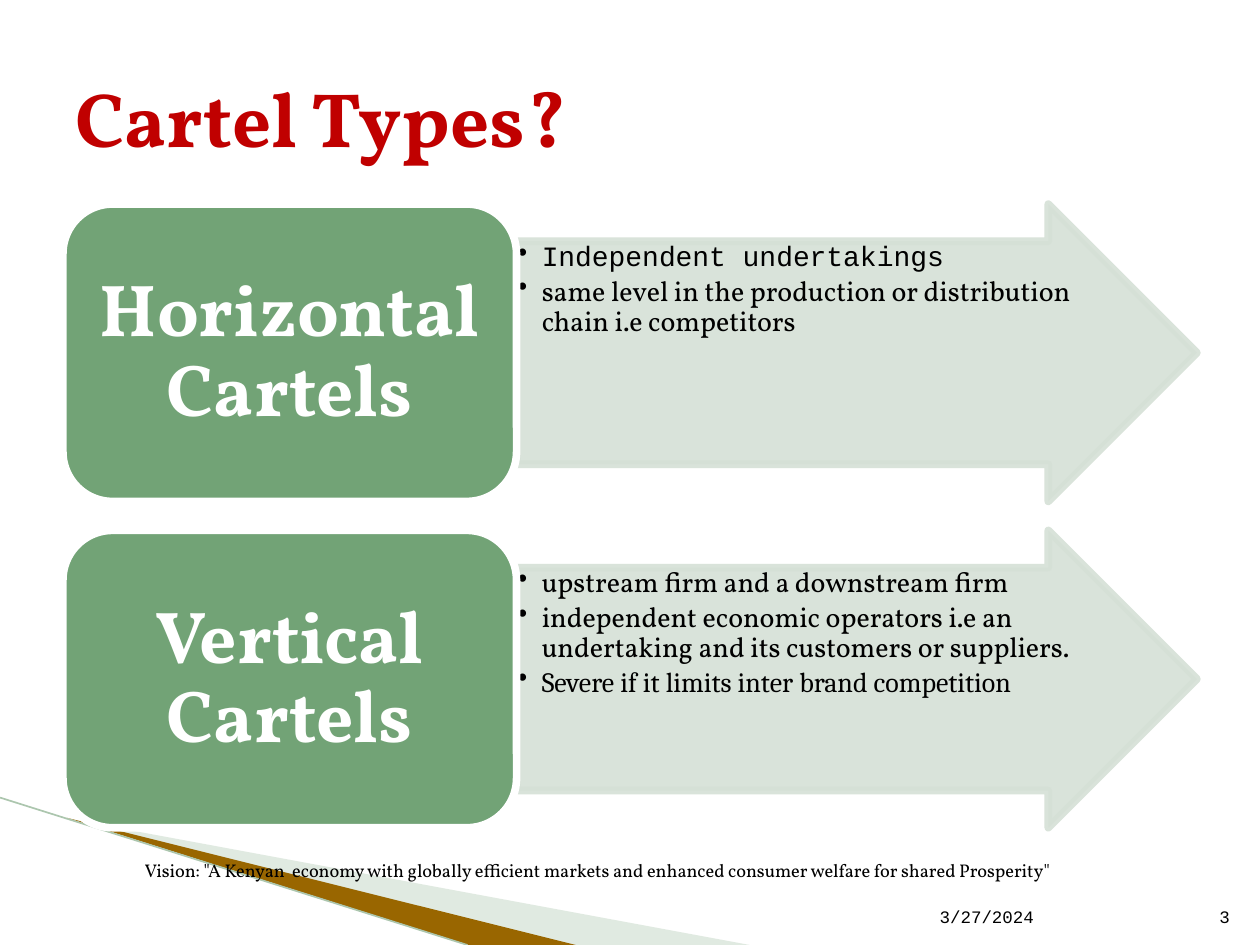
import pptx
import pptx.dml.color
import pptx.enum.shapes
import pptx.enum.text
import pptx.oxml.ns
import pptx.oxml.xmlchemy
import pptx.util
from lxml import etree

Inches = pptx.util.Inches
Pt = pptx.util.Pt
RGBColor = pptx.dml.color.RGBColor
Shape = pptx.enum.shapes.MSO_SHAPE
Align = pptx.enum.text.PP_ALIGN
Anchor = pptx.enum.text.MSO_ANCHOR
qn = pptx.oxml.ns.qn

BLACK = RGBColor(0x00, 0x00, 0x00)
WHITE = RGBColor(0xFF, 0xFF, 0xFF)
RED = RGBColor(0xC0, 0x00, 0x00)
GREEN = RGBColor(0x72, 0xA3, 0x76)
PALE_GREEN = RGBColor(0xD5, 0xE0, 0xD6)
SWOOSH_GREEN = RGBColor(0xB3, 0xCB, 0xB5)
LINE_GREEN = RGBColor(0xAC, 0xC6, 0xAE)
BROWN = RGBColor(0x99, 0x66, 0x00)

SERIF = "Vollkorn"
MONO = "Courier New"
BORDER = Pt(4.33)

CARTELS = [
    ("Horizontal Cartels", [
        ("Independent undertakings", MONO),
        ("same level in the production or distribution chain i.e competitors", SERIF),
    ]),
    ("Vertical Cartels", [
        ("upstream firm and a downstream firm", SERIF),
        ("independent economic operators i.e an undertaking and its customers or suppliers.", SERIF),
        ("Severe if it limits inter brand competition", "Cambria"),
    ]),
]


def write_text(paragraph, text, *, size, font=SERIF, color=BLACK, bold=False,
               align=Align.LEFT, line_spacing=None, space_after=None, bullet=False):
    if bullet:
        paragraph.level = 1
        properties = paragraph._p.get_or_add_pPr()
        properties.set("marL", str(Inches(0.19)))
        properties.set("indent", str(-Inches(0.19)))
        etree.SubElement(properties, qn("a:buChar")).set("char", "•")
    paragraph.alignment = align
    paragraph.line_spacing = line_spacing
    paragraph.space_after = space_after
    run = paragraph.add_run()
    run.text = text
    run.font.name = font
    run.font.size = Pt(size)
    run.font.bold = bold
    run.font.color.rgb = color


def set_opacity(shape, percent):
    for color in shape.element.spPr.iter(qn("a:srgbClr")):
        etree.SubElement(color, qn("a:alpha")).set("val", str(percent * 1000))


def set_frame(frame, anchor, horizontal, vertical):
    frame.word_wrap = True
    frame.vertical_anchor = anchor
    frame.margin_left = frame.margin_right = Inches(horizontal)
    frame.margin_top = frame.margin_bottom = Inches(vertical)


class SlideBuilder:
    def __init__(self, slide):
        self.slide = slide

    def swoosh(self, points, color, opacity=100):
        start, *rest = [(Inches(x), Inches(y)) for x, y in points]
        builder = self.slide.shapes.build_freeform(*start, scale=1.0)
        builder.add_line_segments(rest, close=True)
        shape = builder.convert_to_shape()
        shape.shadow.inherit = False
        shape.fill.solid()
        shape.fill.fore_color.rgb = color
        shape.line.fill.background()
        if opacity < 100:
            set_opacity(shape, opacity)

    def line(self, x1, y1, x2, y2, color, width):
        connector = self.slide.shapes.add_connector(
            pptx.enum.shapes.MSO_CONNECTOR.STRAIGHT,
            Inches(x1), Inches(y1), Inches(x2), Inches(y2))
        connector.line.color.rgb = color
        connector.line.width = Pt(width)
        etree.SubElement(connector.element.spPr, qn("a:effectLst"))

    def block(self, kind, left, top, width, height, fill, border):
        shape = self.slide.shapes.add_shape(
            kind, Inches(left), Inches(top), Inches(width), Inches(height))
        shape.shadow.inherit = False
        shape.fill.solid()
        shape.fill.fore_color.rgb = fill
        shape.line.color.rgb = border
        shape.line.width = BORDER
        return shape

    def arrow(self, left, top, width, height, bullets):
        shape = self.block(Shape.RIGHT_ARROW, left, top, width, height, PALE_GREEN, PALE_GREEN)
        shape.adjustments[0] = 0.75
        shape.adjustments[1] = 0.5
        set_opacity(shape, 90)
        frame = shape.text_frame
        set_frame(frame, Anchor.TOP, 0.01, 0.01)
        for index, (text, font) in enumerate(bullets):
            paragraph = frame.add_paragraph() if index else frame.paragraphs[0]
            write_text(paragraph, text, size=16, font=font, line_spacing=0.9,
                       space_after=Pt(2.4), bullet=True)

    def heading(self, left, top, width, height, text):
        shape = self.block(Shape.ROUNDED_RECTANGLE, left, top, width, height, GREEN, WHITE)
        set_frame(shape.text_frame, Anchor.MIDDLE, 0.17, 0.09)
        write_text(shape.text_frame.paragraphs[0], text, size=42, color=WHITE,
                   bold=True, align=Align.CENTER, line_spacing=0.9)

    def label(self, left, top, width, height, text, anchor=Anchor.TOP, **text_format):
        box = self.slide.shapes.add_textbox(
            Inches(left), Inches(top), Inches(width), Inches(height))
        set_frame(box.text_frame, anchor, 0.1, 0.05)
        write_text(box.text_frame.paragraphs[0], text, **text_format)


def main():
    presentation = pptx.Presentation()
    presentation.slide_width = Inches(10)
    presentation.slide_height = Inches(7.5)
    slide = presentation.slides.add_slide(presentation.slide_layouts[6])
    builder = SlideBuilder(slide)

    builder.swoosh([(0.55, 6.5), (5.95, 7.5), (4.56, 7.5)], SWOOSH_GREEN, opacity=40)
    builder.swoosh([(0.53, 6.49), (4.57, 7.5), (3.72, 7.5)], BROWN)
    builder.line(0, 6.33, 3.71, 7.5, LINE_GREEN, 0.95)

    for row, (name, bullets) in enumerate(CARTELS):
        top = 1.62 + row * 2.59
        builder.arrow(4.1, top, 5.4, 2.36, bullets)
        builder.heading(0.5, top, 3.6, 2.36, name)

    builder.label(0.5, 0.3, 9, 1.25, "Cartel Types?", anchor=Anchor.MIDDLE,
                  size=44, color=RED, bold=True)
    builder.label(7.36, 7.01, 2.1, 0.4, "3/27/2024", anchor=Anchor.BOTTOM, size=10, font=MONO)
    builder.label(9.46, 7.01, 0.4, 0.4, "3", anchor=Anchor.BOTTOM, size=10, font=MONO,
                  align=Align.RIGHT)
    builder.label(1.05, 6.77, 7.75, 0.35,
                  'Vision: "A Kenyan  economy with globally efficient markets and '
                  'enhanced consumer welfare for shared Prosperity"', size=10.5)

    presentation.save("out.pptx")


if __name__ == "__main__":
    main()
